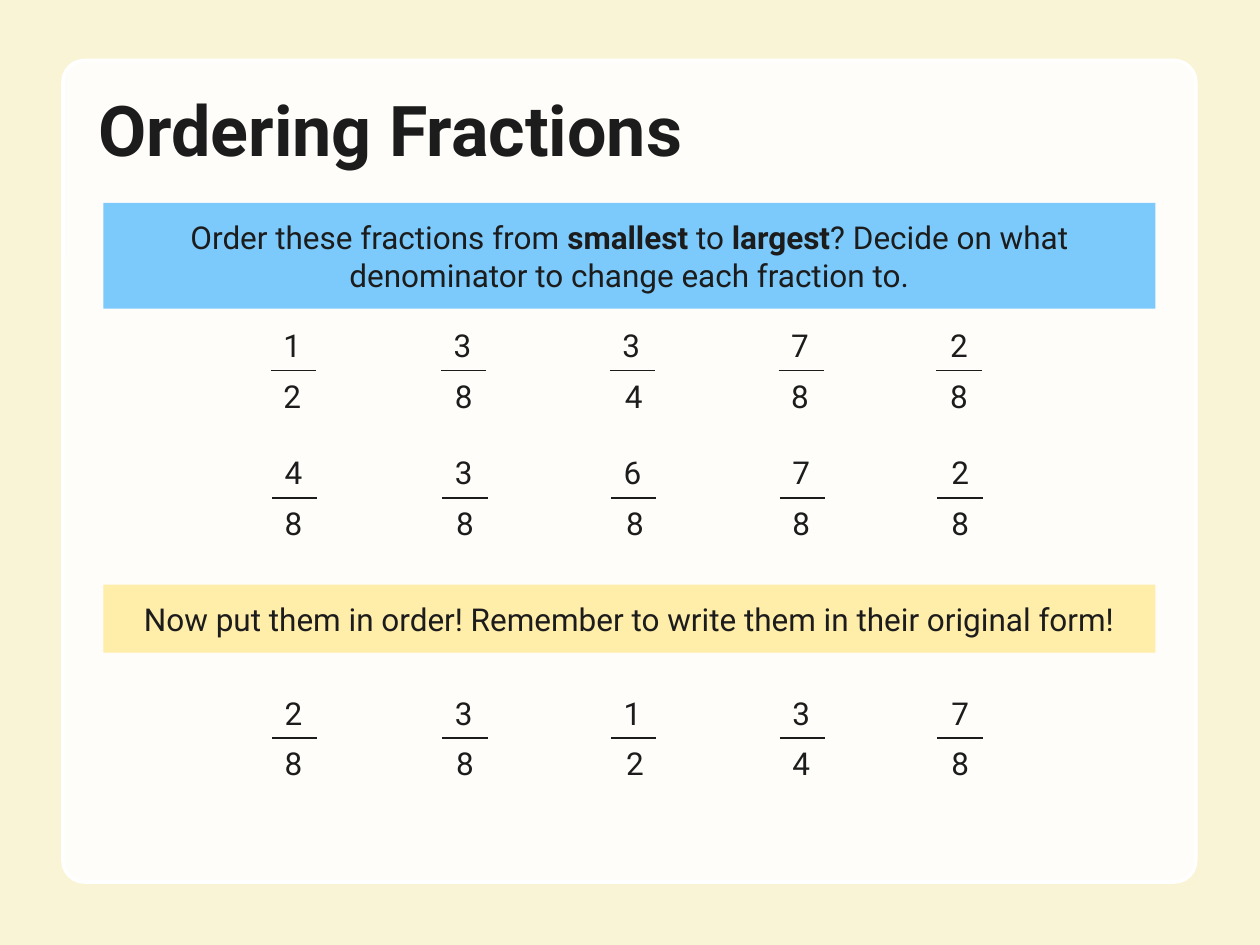
from lxml import etree
from pptx import Presentation
from pptx.dml.color import RGBColor
from pptx.enum.shapes import MSO_CONNECTOR, MSO_SHAPE
from pptx.enum.text import MSO_ANCHOR, MSO_AUTO_SIZE, PP_ALIGN
from pptx.oxml.ns import qn
from pptx.util import Inches, Pt

STRAIGHT = MSO_CONNECTOR.STRAIGHT
RECTANGLE = MSO_SHAPE.RECTANGLE
ROUNDED = MSO_SHAPE.ROUNDED_RECTANGLE
MIDDLE = MSO_ANCHOR.MIDDLE
GROW = MSO_AUTO_SIZE.SHAPE_TO_FIT_TEXT
CENTER = PP_ALIGN.CENTER
INK = "1C1C1C"


def color(value):
    return RGBColor.from_string(value)


def write(frame, runs, size=18, inset=None):
    frame.word_wrap = True
    if inset is not None:
        frame.vertical_anchor = MIDDLE
        frame.margin_left = frame.margin_right = Inches(inset)
        frame.margin_top = frame.margin_bottom = Inches(inset)
    paragraph = frame.paragraphs[0]
    paragraph.font.name = "Roboto"
    paragraph.font.size = Pt(size)
    paragraph.font.color.rgb = color(INK)
    for words, bold in runs:
        run = paragraph.add_run()
        run.text = words
        if bold:
            run.font.bold = True
    return paragraph


prs = Presentation()
prs.slide_width = Inches(10)
prs.slide_height = Inches(7.5)
slide = prs.slides.add_slide(prs.slide_layouts[6])
slide.background.fill.solid()
slide.background.fill.fore_color.rgb = color("FAF4D6")

card = slide.shapes.add_shape(ROUNDED, Inches(0.5), Inches(0.48), Inches(8.99), Inches(6.52))
card.adjustments[0] = 0.026
card.shadow.inherit = False
card.fill.solid()
card.fill.fore_color.rgb = color("FFFFFF")
card_color = card.fill._xPr.find(qn("a:solidFill"))[0]
etree.SubElement(card_color, qn("a:alpha"), val="90000")
card.line.color.rgb = color("FFFFFF")
card.line.width = Pt(2)

title = slide.shapes.add_textbox(Inches(0.5), Inches(0.52), Inches(8.99), Inches(1.09))
heading = write(title.text_frame, [("Ordering Fractions", True)], size=40, inset=0.28)
heading.line_spacing = 0.9

banners = [
    (1.61, 0.84, "7BCAFB", [
        ("Order these fractions from ", False),
        ("smallest", True),
        (" to ", False),
        ("largest", True),
        ("? Decide on what denominator to change each fraction to.", False),
    ]),
    (4.64, 0.54, "FFEDAA", [
        ("Now put them in order! Remember to write them in their original form!", False),
    ]),
]
for top, height, fill, runs in banners:
    banner = slide.shapes.add_shape(RECTANGLE, Inches(0.82), Inches(top), Inches(8.35), Inches(height))
    banner.shadow.inherit = False
    banner.fill.solid()
    banner.fill.fore_color.rgb = color(fill)
    banner.line.fill.background()
    write(banner.text_frame, runs, inset=0.12).alignment = CENTER
    banner.text_frame.auto_size = GROW

bar_width = 0.36
digit_height = 0.4
columns = [
    # bar left, numerator centre, denominator centre, digit box width
]
columns = [
    (2.15, 2.32, 2.32, 0.36),
    (3.5, 3.67, 3.68, 0.47),
    (4.84, 5.01, 5.03, 0.46),
    (6.18, 6.35, 6.35, 0.36),
    (7.43, 7.61, 7.61, 0.49),
]
rows = [
    (2.94, 0, ["1/2", "3/8", "3/4", "7/8", "2/8"]),
    (3.95, 0.01, ["4/8", "3/8", "6/8", "7/8", "2/8"]),
    (5.86, 0.01, ["2/8", "3/8", "1/2", "3/4", "7/8"]),
]
for bar_top, shift, fractions in rows:
    for (bar_left, over, under, width), fraction in zip(columns, fractions):
        numerator, denominator = fraction.split("/")
        group = slide.shapes.add_group_shape()
        for digit, center, top in (
            (numerator, over, bar_top - digit_height),
            (denominator, under, bar_top),
        ):
            box = group.shapes.add_textbox(
                Inches(center + shift - width / 2), Inches(top), Inches(width), Inches(digit_height))
            write(box.text_frame, [(digit, False)]).alignment = CENTER
            box.text_frame.auto_size = GROW
        bar = group.shapes.add_connector(
            STRAIGHT, Inches(bar_left + shift), Inches(bar_top),
            Inches(bar_left + shift + bar_width), Inches(bar_top))
        bar.line.color.rgb = color(INK)
        bar.line.width = Pt(1)
        etree.SubElement(bar._element.spPr, qn("a:effectLst"))

prs.save("out.pptx")
